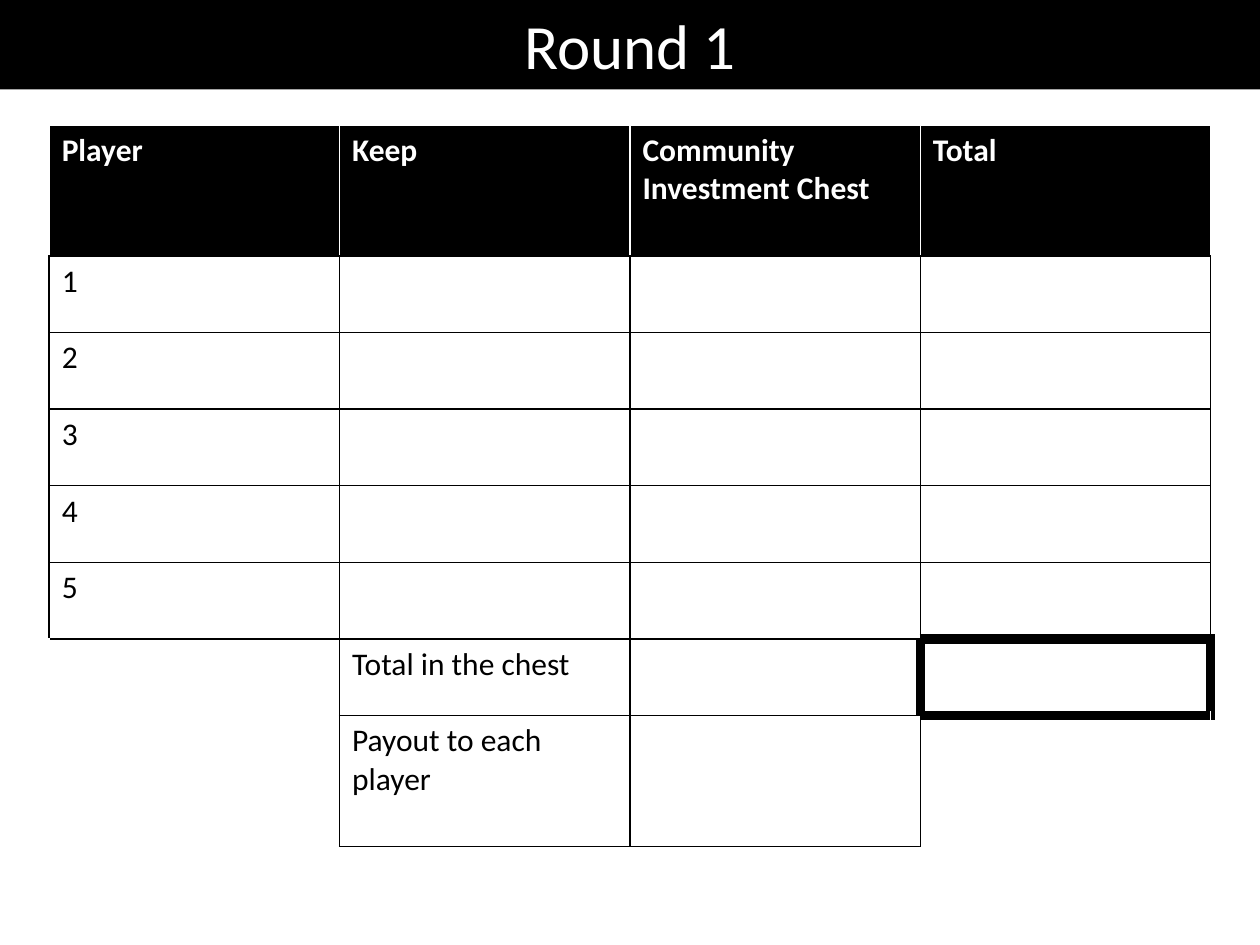
from dataclasses import dataclass

from lxml import etree
from pptx import Presentation
from pptx.dml.color import RGBColor
from pptx.enum import text
from pptx.oxml import ns
from pptx.util import Inches, Pt


@dataclass(frozen=True)
class Theme:
    font: str = "Calibri"
    dark: str = "000000"
    light: str = "FFFFFF"
    title_size: int = 36
    body_size: int = 18
    thin: int = 1
    thick: int = 6


THEME = Theme()
BLACK = (THEME.dark, THEME.thin)
WHITE = (THEME.light, THEME.thin)
HEAVY = (THEME.dark, THEME.thick)

ROWS = [
    ["Player", "Keep", "Community Investment Chest", "Total"],
    *[[str(player), "", "", ""] for player in range(1, 6)],
    ["", "Total in the chest", "", ""],
    ["", "Payout to each player", "", ""],
]
HEADER_BORDERS = {"L": WHITE, "R": WHITE, "T": WHITE}
SPECIAL_BORDERS = {
    (5, 3): {"B": HEAVY},
    (6, 0): {"L": WHITE, "B": WHITE},
    (6, 2): {"R": HEAVY},
    (6, 3): dict.fromkeys("LRTB", HEAVY),
    (7, 0): {"L": WHITE, "T": WHITE, "B": WHITE},
    (7, 3): {"R": WHITE, "T": HEAVY, "B": WHITE},
}


def write_text(frame, content, *, size, color, bold=False, align=text.PP_ALIGN.LEFT):
    paragraph = frame.paragraphs[0]
    paragraph.alignment = align
    run = paragraph.add_run() if content else None
    font = run.font if run else paragraph.font
    if run:
        run.text = content
    font.name = THEME.font
    font.size = Pt(size)
    font.bold = bold
    font.color.rgb = RGBColor.from_string(color)


def set_fill(target, color):
    target.fill.solid()
    target.fill.fore_color.rgb = RGBColor.from_string(color)


def set_borders(cell, special):
    properties = cell._tc.get_or_add_tcPr()
    for side in "LRTB":
        color, width = special.get(side, BLACK)
        line = etree.SubElement(properties, ns.qn(f"a:ln{side}"), w=str(Pt(width)))
        fill = etree.SubElement(line, ns.qn("a:solidFill"))
        etree.SubElement(fill, ns.qn("a:srgbClr"), val=color)


def add_title(slide, left, top, width, height):
    title = slide.shapes.title
    title.left, title.top, title.width, title.height = left, top, width, height
    set_fill(title, THEME.dark)
    frame = title.text_frame
    frame.word_wrap = True
    frame.auto_size = text.MSO_AUTO_SIZE.NONE
    frame.vertical_anchor = text.MSO_ANCHOR.MIDDLE
    write_text(frame, "Round 1", size=THEME.title_size, color=THEME.light,
               align=text.PP_ALIGN.CENTER)


def add_score_table(slide, left, top, width, height):
    row_count, column_count = len(ROWS), len(ROWS[0])
    table = slide.shapes.add_table(row_count, column_count, left, top, width, height).table
    table.horz_banding = False
    for column in table.columns:
        column.width = width // column_count

    tall = Inches(1.04)
    for index, row in enumerate(table.rows):
        is_outer = index in (0, row_count - 1)
        row.height = tall if is_outer else (height - 2 * tall) // (row_count - 2)

    for row_index, labels in enumerate(ROWS):
        is_header = row_index == 0
        for column_index, label in enumerate(labels):
            cell = table.cell(row_index, column_index)
            special = SPECIAL_BORDERS.get((row_index, column_index), {})
            set_borders(cell, HEADER_BORDERS if is_header else special)
            set_fill(cell, THEME.dark if is_header else THEME.light)
            write_text(cell.text_frame, label, size=THEME.body_size, bold=is_header,
                       color=THEME.light if is_header else THEME.dark)


def main():
    presentation = Presentation()
    presentation.slide_width = Inches(10)
    presentation.slide_height = Inches(7.5)
    slide = presentation.slides.add_slide(presentation.slide_layouts[5])
    add_title(slide, 0, 0, presentation.slide_width, Inches(0.71))
    add_score_table(slide, Inches(0.39), Inches(0.99), Inches(9.22), Inches(5.73))
    presentation.save("out.pptx")


if __name__ == "__main__":
    main()
